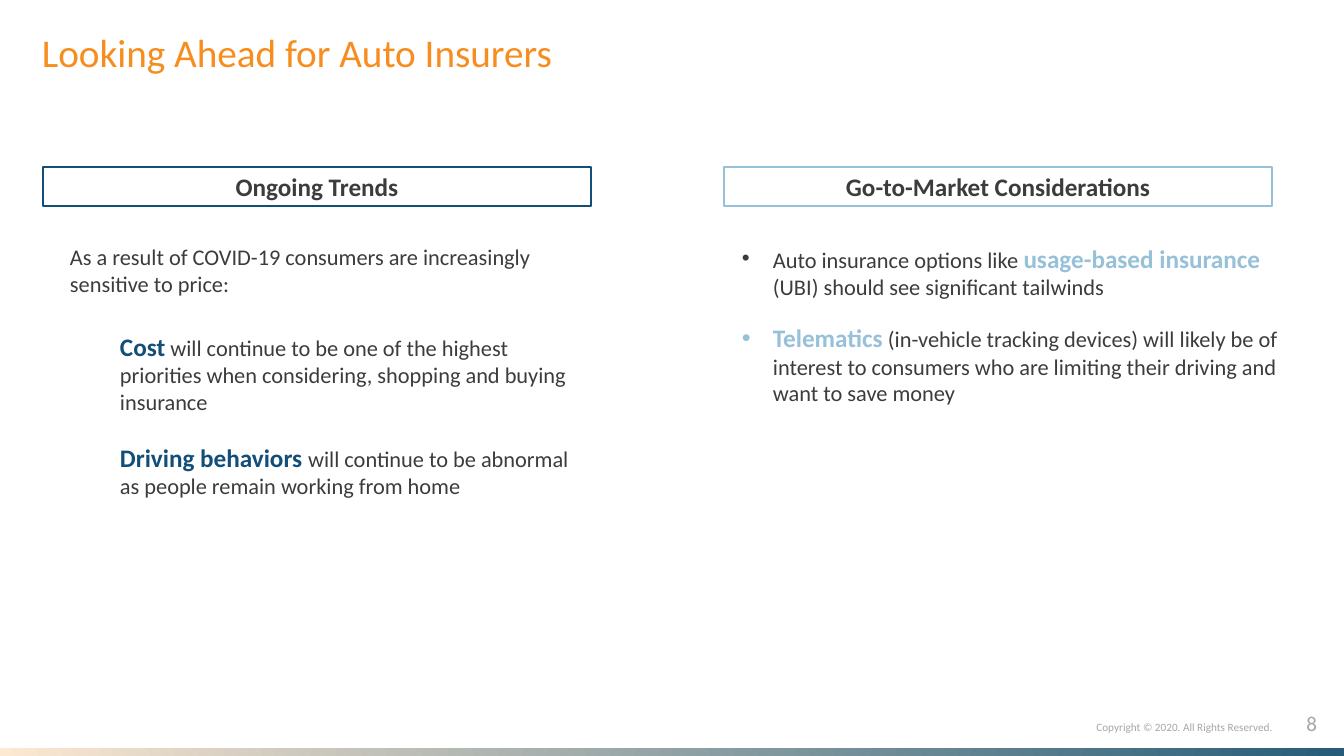
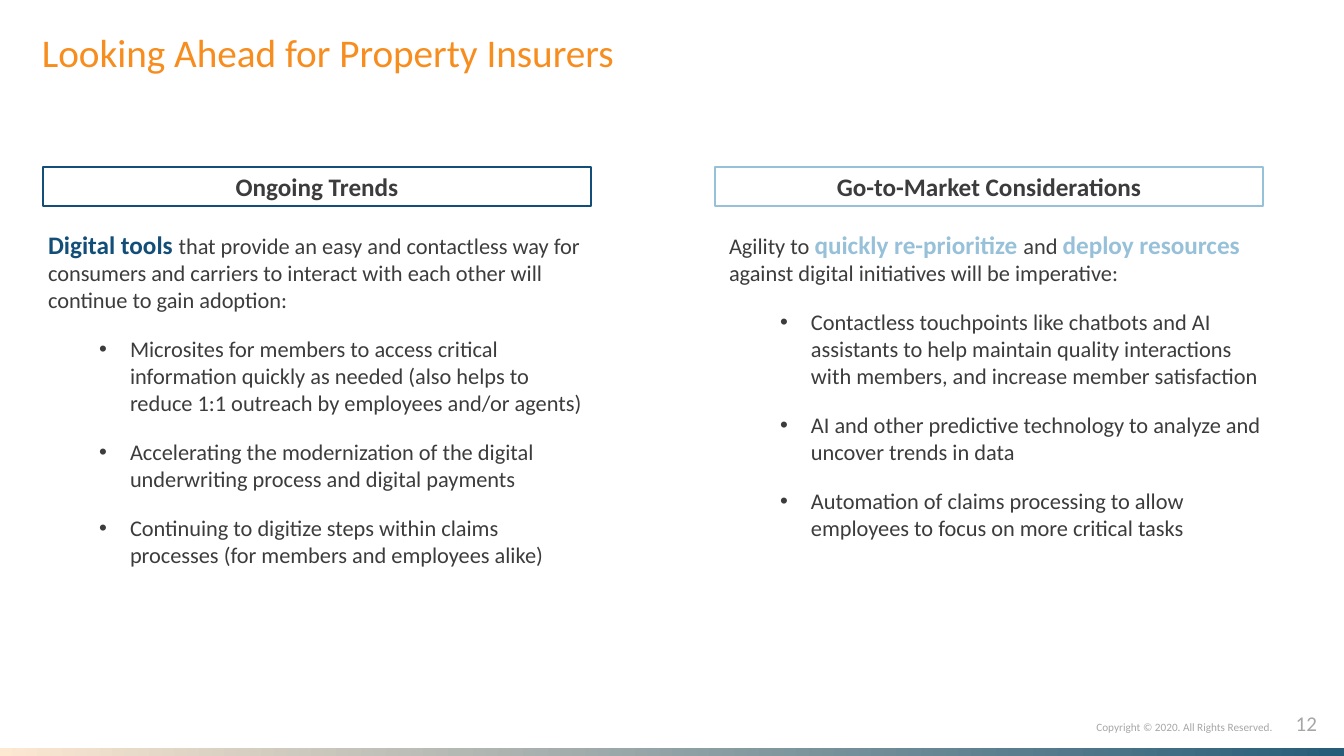
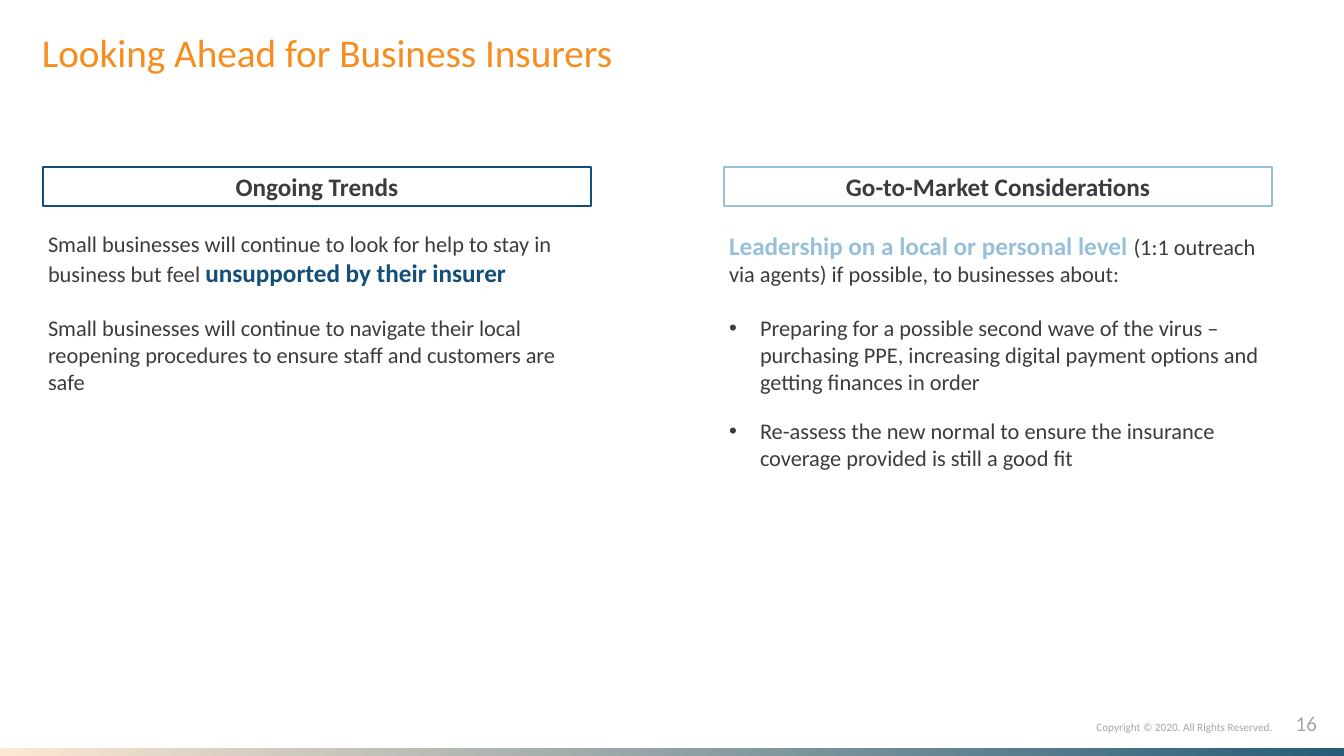
from lxml.etree import SubElement
from pptx import Presentation
from pptx.dml.color import RGBColor
from pptx.enum.shapes import MSO_SHAPE
from pptx.enum.text import MSO_ANCHOR, PP_ALIGN
from pptx.oxml.ns import qn
from pptx.util import Pt

# Scale: 1344 x 756 px slide
EMU_PER_PX = 914400 / 100.8
SLIDE_W, SLIDE_H = 1344, 756

FONT = "Calibri"
ORANGE = RGBColor(0xF7, 0x8D, 0x1E)
NAVY = RGBColor(0x12, 0x4E, 0x78)
SKY = RGBColor(0x97, 0xC0, 0xD9)
INK = RGBColor(0x3C, 0x3C, 0x3C)
GREY = RGBColor(0xA6, 0xA6, 0xA6)
WHITE = RGBColor(0xFF, 0xFF, 0xFF)
BAND_START = RGBColor(0xFD, 0xE8, 0xD2)
BAND_END = RGBColor(0x26, 0x5C, 0x78)

# Paragraph formats; lengths in px, gaps in points
LEAD = dict(after=16)
OPENING = dict(after=19.5)
NESTED = dict(level=1, margin=50)
BULLET = dict(margin=31, bullet=True, after=16)
SUB_BULLET = dict(level=1, margin=82, bullet=True, after=16)

HEADING_Y, HEADING_W, HEADING_H = 167, 548, 39


def px(length):
    return round(length * EMU_PER_PX)


def place(box):
    return [px(length) for length in box]


def write(paragraph, text, size=16, color=INK, bold=False, accent=None,
          align=PP_ALIGN.LEFT, level=0, margin=0, bullet=False, after=0,
          line=None):
    """Fill a paragraph; parts between asterisks are bold, larger and in the accent."""
    properties = paragraph._p.get_or_add_pPr()
    properties.set("marL", str(px(margin)))
    properties.set("indent", str(px(-31 if bullet else 0)))
    if bullet:
        SubElement(properties, qn("a:buFont")).set("typeface", "Arial")
        SubElement(properties, qn("a:buChar")).set("char", "•")
    paragraph.alignment = align
    paragraph.level = level
    paragraph.space_before = Pt(0)
    paragraph.space_after = Pt(after)
    if line:
        paragraph.line_spacing = Pt(line)
    for number, part in enumerate(text.split("*")):
        if not part:
            continue
        stressed = number % 2 == 1
        run = paragraph.add_run()
        run.text = part
        run.font.name = FONT
        run.font.size = Pt(18 if stressed else size)
        run.font.bold = stressed or bold
        run.font.color.rgb = accent if stressed else color


def set_frame(frame, insets=(5, 5), anchor=MSO_ANCHOR.TOP):
    across, down = place(insets)
    frame.word_wrap = True
    frame.vertical_anchor = anchor
    frame.margin_left = frame.margin_right = across
    frame.margin_top = frame.margin_bottom = down
    return frame


def text_box(slide, box, paragraphs, insets=(5, 5), anchor=MSO_ANCHOR.TOP, **shared):
    frame = set_frame(slide.shapes.add_textbox(*place(box)).text_frame, insets, anchor)
    for number, (text, style) in enumerate(paragraphs):
        paragraph = frame.add_paragraph() if number else frame.paragraphs[0]
        write(paragraph, text, **shared, **style)


def rectangle(slide, box):
    shape = slide.shapes.add_shape(MSO_SHAPE.RECTANGLE, *place(box))
    shape.shadow.inherit = False
    return shape


def footer(slide, page, box):
    left, top, width, height = box
    # Page number and copyright
    text_box(slide, (left + width - 95, top, 68, 28), [(str(page), {})],
             insets=(0, 0), anchor=MSO_ANCHOR.MIDDLE,
             size=15, color=GREY, align=PP_ALIGN.RIGHT)
    text_box(slide, (left + width - 305, top + 6, 244, 21),
             [("Copyright © 2020. All Rights Reserved.", {})],
             insets=(10, 5), size=8, color=GREY, align=PP_ALIGN.RIGHT)
    # Gradient band
    band = rectangle(slide, (left, top + height - 8, width, 8))
    band.line.fill.background()
    band.fill.gradient()
    band.fill.gradient_angle = 0
    for stop, color, position in zip(band.fill.gradient_stops,
                                     (BAND_START, BAND_END), (0, 1)):
        stop.color.rgb = color
        stop.position = position


def column(slide, left, heading, accent, body, paragraphs):
    """Heading frame with body text; body is offset from the heading's corner."""
    dx, dy, width, height = body
    text_box(slide, (left + dx, HEADING_Y + dy, width, height), paragraphs, accent=accent)
    frame = rectangle(slide, (left, HEADING_Y, HEADING_W, HEADING_H))
    frame.fill.solid()
    frame.fill.fore_color.rgb = WHITE
    frame.line.color.rgb = accent
    frame.line.width = Pt(2)
    write(set_frame(frame.text_frame, anchor=MSO_ANCHOR.MIDDLE).paragraphs[0],
          heading, size=18, bold=True, align=PP_ALIGN.CENTER)


def outlook_slide(deck, page, sector, trends, considerations):
    slide = deck.slides.add_slide(deck.slide_layouts[6])
    footer(slide, page, (0, 709, SLIDE_W, SLIDE_H - 709))
    text_box(slide, (37, 31, 1270, 48), [(f"Looking Ahead for {sector} Insurers", {})],
             insets=(5, 0), size=28, color=ORANGE, line=32)
    column(slide, 43, "Ongoing Trends", NAVY, **trends)
    column(slide, heading="Go-to-Market Considerations", accent=SKY, **considerations)


OUTLOOKS = [
    dict(
        page=8, sector="Auto",
        trends=dict(body=(22, 71, 522, 330), paragraphs=[
            ("As a result of COVID-19 consumers are increasingly sensitive to price:",
             dict(after=24.4)),
            ("*Cost* will continue to be one of the highest priorities when "
             "considering, shopping and buying insurance", NESTED | OPENING),
            ("*Driving behaviors *will continue to be abnormal as people remain "
             "working from home", NESTED),
        ]),
        considerations=dict(left=724, body=(13, 71, 562, 230), paragraphs=[
            ("Auto insurance options like *usage-based insurance *(UBI) should see "
             "significant tailwinds", BULLET),
            ("*Telematics* (in-vehicle tracking devices) will likely be of interest to "
             "consumers who are limiting their driving and want to save money", BULLET),
        ]),
    ),
    dict(
        page=12, sector="Property",
        trends=dict(body=(0, 57, 548, 346), paragraphs=[
            ("*Digital tools *that provide an easy and contactless way for consumers and "
             "carriers to interact with each other will continue to gain adoption:", LEAD),
            ("Microsites for members to access critical information quickly as needed "
             "(also helps to reduce 1:1 outreach by employees and/or agents)", SUB_BULLET),
            ("Accelerating the modernization of the digital underwriting process and "
             "digital payments", SUB_BULLET),
            ("Continuing to digitize steps within claims processes (for members and "
             "employees alike)", SUB_BULLET),
        ]),
        considerations=dict(left=715, body=(9, 57, 548, 365), paragraphs=[
            ("Agility to *quickly re-prioritize *and *deploy resources *against digital "
             "initiatives will be imperative:", LEAD),
            ("Contactless touchpoints like chatbots and AI assistants to help maintain "
             "quality interactions with members, and increase member satisfaction",
             SUB_BULLET),
            ("AI and other predictive technology to analyze and uncover trends in data",
             SUB_BULLET),
            ("Automation of claims processing to allow employees to focus on more "
             "critical tasks", SUB_BULLET),
        ]),
    ),
    dict(
        page=16, sector="Business",
        trends=dict(body=(0, 58, 548, 246), paragraphs=[
            ("Small businesses will continue to look for help to stay in business but "
             "feel *unsupported by their insurer*", OPENING),
            ("Small businesses will continue to navigate their local reopening "
             "procedures to ensure staff and customers are safe", {}),
        ]),
        considerations=dict(left=724, body=(0, 58, 548, 429), paragraphs=[
            ("*Leadership on a local or personal level *(1:1 outreach via agents) if "
             "possible, to businesses about:", OPENING),
            ("Preparing for a possible second wave of the virus – purchasing PPE, "
             "increasing digital payment options and getting finances in order", BULLET),
            ("Re-assess the new normal to ensure the insurance coverage provided is "
             "still a good fit", BULLET),
        ]),
    ),
]


def main():
    deck = Presentation()
    deck.slide_width, deck.slide_height = px(SLIDE_W), px(SLIDE_H)
    for outlook in OUTLOOKS:
        outlook_slide(deck, **outlook)
    deck.save("out.pptx")


if __name__ == "__main__":
    main()
